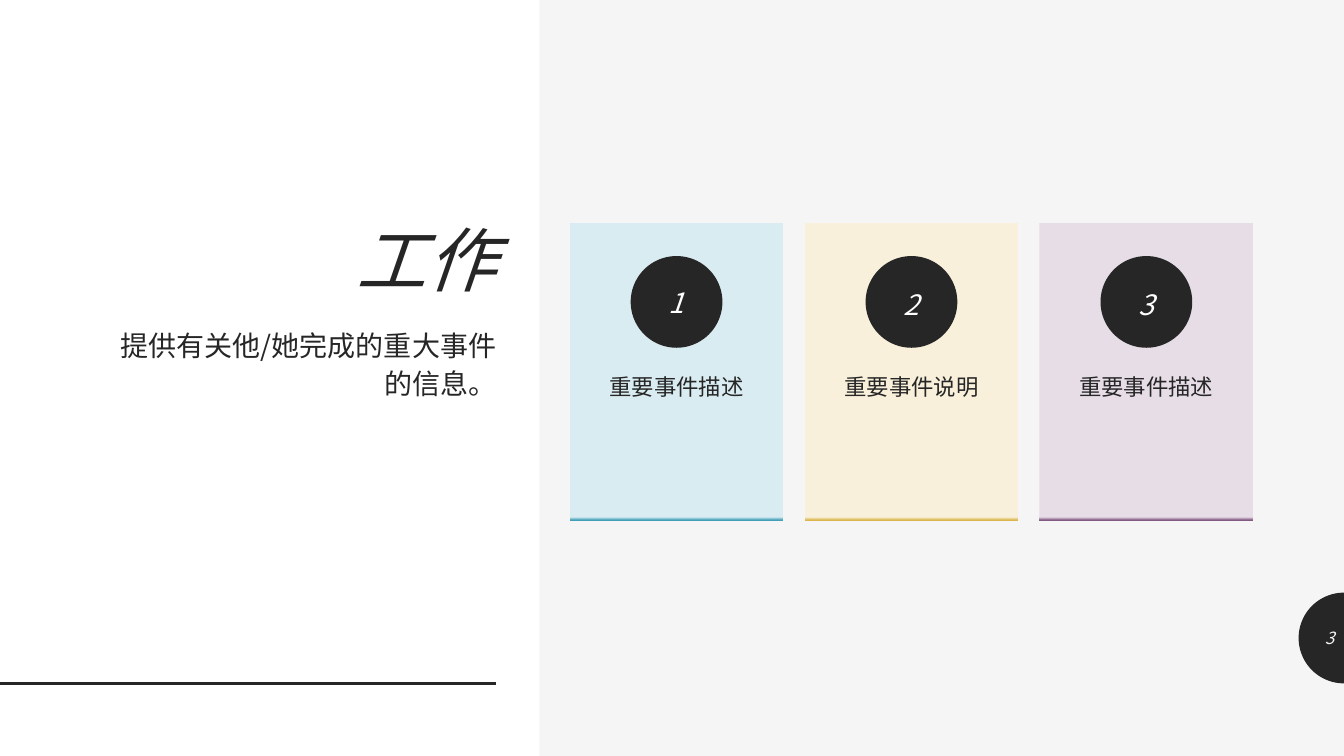
from math import cos, pi, sin

from lxml.etree import SubElement
from pptx import Presentation
from pptx.dml.color import RGBColor
from pptx.enum.shapes import MSO_CONNECTOR, MSO_SHAPE
from pptx.enum.text import MSO_ANCHOR, PP_ALIGN
from pptx.oxml.ns import qn
from pptx.util import Inches, Pt

WIDTH, HEIGHT = 13.33, 7.5
FONT = "Noto Sans CJK SC"
DARK, LIGHT, WHITE = "262626", "F5F5F5", "FFFFFF"
PANEL_WIDTH = 5.35
CARD_LEFT, CARD_TOP, CARD_STEP = 5.65, 2.21, 2.33
CARD_WIDTH, CARD_HEIGHT = 2.12, 2.95
CARDS = [
    ("重要事件描述", "D9ECF1", "439EB7"),
    ("重要事件说明", "F8F0DB", "DCB64D"),
    ("重要事件描述", "E7DDE7", "835B82"),
]


def color(value):
    return RGBColor.from_string(value)


def write(shape, text, size, ink=DARK, italic=False, align=PP_ALIGN.CENTER,
          anchor=MSO_ANCHOR.TOP, line=None, before=0, insets=None):
    frame = shape.text_frame
    frame.word_wrap = True
    frame.vertical_anchor = anchor
    if insets:
        (frame.margin_left, frame.margin_top,
         frame.margin_right, frame.margin_bottom) = map(Inches, insets)
    para = frame.paragraphs[0]
    para.text = text
    para.alignment = align
    para.space_before = Pt(before)
    if line:
        para.line_spacing = line
    font = para.font
    font.size, font.italic, font.name = Pt(size), italic, FONT
    font.color.rgb = color(ink)
    # East Asian typeface
    properties = para._p.pPr.find(qn("a:defRPr"))
    SubElement(properties, qn("a:ea")).set("typeface", FONT)


def add_text(slide, box, text, size, **style):
    write(slide.shapes.add_textbox(*map(Inches, box)), text, size, **style)


def add_filled(slide, kind, box, fill):
    shape = slide.shapes.add_shape(kind, *map(Inches, box))
    shape.shadow.inherit = False
    shape.line.fill.background()
    shape.fill.solid()
    shape.fill.fore_color.rgb = color(fill)
    return shape


def add_left_panel(slide, width, height):
    add_filled(slide, MSO_SHAPE.RECTANGLE, (0, 0, width, height), WHITE)
    # Rule near the bottom
    rule_y = height * 0.904
    rule = slide.shapes.add_connector(
        MSO_CONNECTOR.STRAIGHT, 0, Inches(rule_y), Inches(width * 0.92), Inches(rule_y))
    rule.line.color.rgb = color(DARK)
    rule.line.width = Pt(2)
    SubElement(rule._element.spPr, qn("a:effectLst"))
    # Title and introduction
    left, text_width = 0.83, 4.19
    add_text(slide, (left, 0.61, text_width, 2.43), "工作", 50, italic=True,
             align=PP_ALIGN.RIGHT, anchor=MSO_ANCHOR.BOTTOM, line=0.9)
    add_text(slide, (left, 3.17, text_width, 3.12), "提供有关他/她完成的重大事件的信息。", 20,
             align=PP_ALIGN.RIGHT, line=1.12, before=9)


def add_card(slide, box, number, text, tint, accent):
    left, top, width, height = box
    card = add_filled(slide, MSO_SHAPE.RECTANGLE, box, tint)
    # Tint that turns to the accent along the lower edge
    card.fill.gradient()
    card.fill.gradient_angle = 270
    stops = zip(card.fill.gradient_stops, (0.99, 1), (tint, accent))
    for stop, position, shade in stops:
        stop.position = position
        stop.color.rgb = color(shade)
    write(card, text, 16, line=1.12, before=9, insets=(0, height * 0.495, 0, 0))
    # Numbered badge
    size = 0.91
    badge_box = (left + (width - size) / 2, top + 0.33, size, size)
    badge = add_filled(slide, MSO_SHAPE.OVAL, badge_box, DARK)
    write(badge, str(number), 20, ink=WHITE, italic=True, anchor=MSO_ANCHOR.MIDDLE,
          line=1.12 if number > 1 else None, before=9, insets=(0, 0, 0, 0))


def add_page_number(slide, box, number):
    left, top, width, height = box
    # Half disc against the right edge
    steps = 48
    angles = [pi * step / steps for step in range(steps + 1)]
    points = [(Inches(left + width * (1 - sin(angle))),
               Inches(top + height * (1 - cos(angle)) / 2)) for angle in angles]
    builder = slide.shapes.build_freeform(*points[0])
    builder.add_line_segments(points[1:], close=True)
    disc = builder.convert_to_shape()
    disc.shadow.inherit = False
    disc.fill.solid()
    disc.fill.fore_color.rgb = color(DARK)
    disc.line.fill.background()
    add_text(slide, (left, top + 0.25, width, 0.4), str(number), 12, ink=LIGHT,
             italic=True, align=PP_ALIGN.RIGHT, anchor=MSO_ANCHOR.MIDDLE)


def main():
    deck = Presentation()
    deck.slide_width, deck.slide_height = Inches(WIDTH), Inches(HEIGHT)
    slide = deck.slides.add_slide(deck.slide_layouts[6])
    slide.background.fill.solid()
    slide.background.fill.fore_color.rgb = color(LIGHT)

    add_left_panel(slide, PANEL_WIDTH, HEIGHT)
    for index, (text, tint, accent) in enumerate(CARDS):
        box = (CARD_LEFT + index * CARD_STEP, CARD_TOP, CARD_WIDTH, CARD_HEIGHT)
        add_card(slide, box, index + 1, text, tint, accent)
    add_page_number(slide, (WIDTH - 0.45, 5.88, 0.45, 0.9), 3)

    deck.save("out.pptx")


if __name__ == "__main__":
    main()
